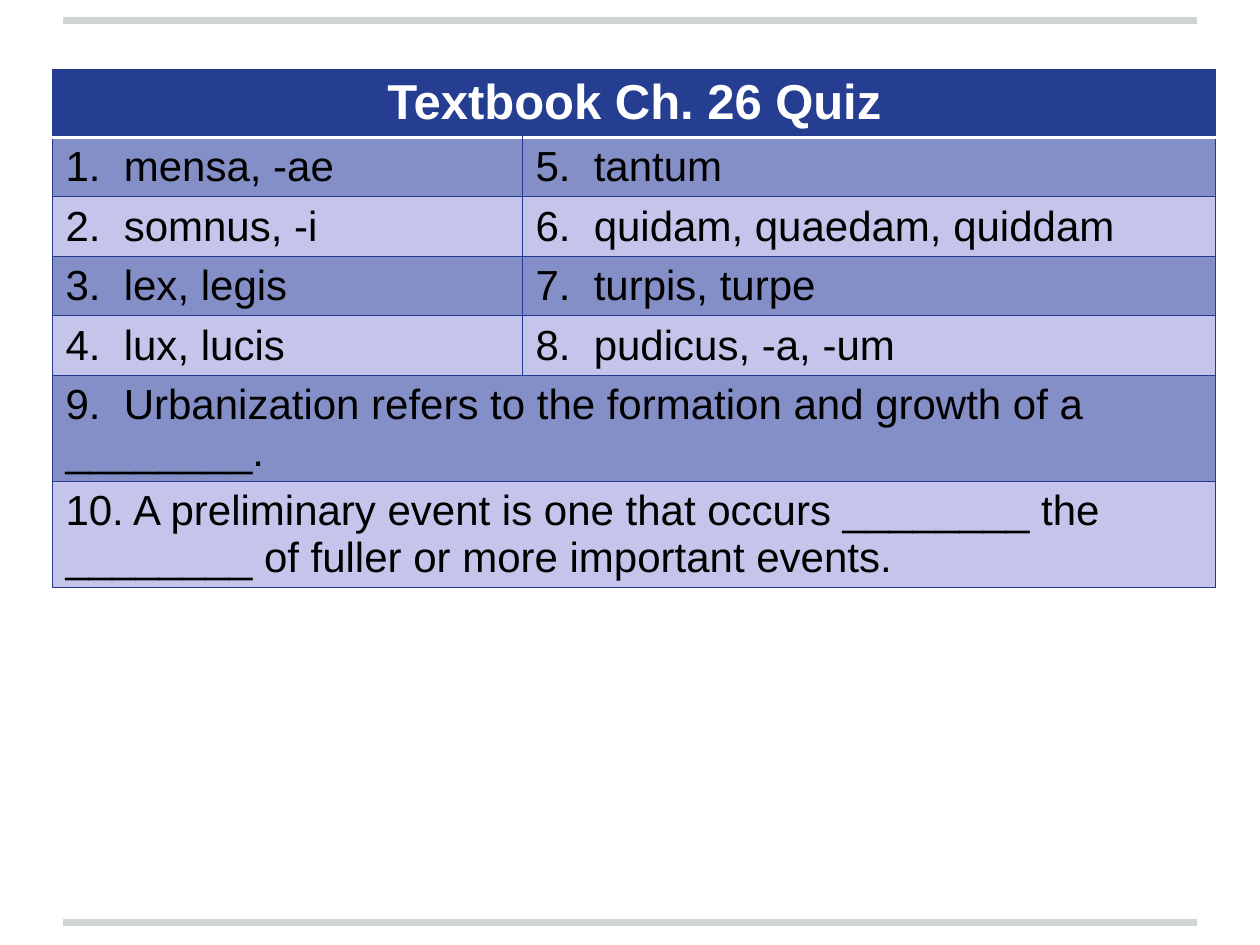
from dataclasses import dataclass

from lxml import etree
from pptx import Presentation
from pptx.dml.color import RGBColor
from pptx.enum import shapes, text
from pptx.oxml import ns
from pptx.util import Inches, Pt


@dataclass(frozen=True)
class Theme:
    font: str = "Arial"
    header_size: float = 28
    body_size: float = 24
    header_fill: str = "253E91"
    row_fills: tuple[str, str] = ("858FC7", "C5C5EB")
    border: str = "223B90"
    border_width: float = 0.75
    header_rule_width: float = 2
    white: str = "FFFFFF"
    black: str = "000000"
    rule: str = "CFD4D4"
    rule_width: float = 4


@dataclass(frozen=True)
class QuizRow:
    texts: tuple[str, ...]
    height: float = 0.47


THEME = Theme()
COLUMN_WIDTHS = (3.73, 5.5)
RULE_TOPS = (7.32, 0.16)
QUIZ_ROWS = (
    QuizRow(("Textbook Ch. 26 Quiz",), 0.54),
    QuizRow(("1.  mensa, -ae", "5.  tantum")),
    QuizRow(("2.  somnus, -i", "6.  quidam, quaedam, quiddam")),
    QuizRow(("3.  lex, legis", "7.  turpis, turpe")),
    QuizRow(("4.  lux, lucis", "8.  pudicus, -a, -um")),
    QuizRow(("9.  Urbanization refers to the formation and growth of a ________.",), 0.84),
    QuizRow(("10. A preliminary event is one that occurs ________ the ________ "
             "of fuller or more important events.",), 0.84),
)


def write_text(frame, content: str, *, size: float, color: str,
               bold: bool = False, align=text.PP_ALIGN.LEFT) -> None:
    paragraph = frame.paragraphs[0]
    paragraph.alignment = align
    run = paragraph.add_run()
    run.text = content
    run.font.name = THEME.font
    run.font.size = Pt(size)
    run.font.bold = bold
    run.font.color.rgb = RGBColor.from_string(color)


def set_borders(cell, row_index: int) -> None:
    properties = cell._tc.get_or_add_tcPr()
    header_edge = {0: "lnB", 1: "lnT"}.get(row_index)
    for position, edge in enumerate(("lnL", "lnR", "lnT", "lnB")):
        is_header_rule = edge == header_edge
        width = THEME.header_rule_width if is_header_rule else THEME.border_width
        line = etree.Element(ns.qn(f"a:{edge}"), w=str(Pt(width)))
        fill = etree.SubElement(line, ns.qn("a:solidFill"))
        color = THEME.white if is_header_rule else THEME.border
        etree.SubElement(fill, ns.qn("a:srgbClr"), val=color)
        properties.insert(position, line)


def add_rule(slide, top: float) -> None:
    connector = slide.shapes.add_connector(
        shapes.MSO_CONNECTOR.STRAIGHT,
        Inches(0.5), Inches(top), Inches(9.5), Inches(top))
    connector.line.color.rgb = RGBColor.from_string(THEME.rule)
    connector.line.width = Pt(THEME.rule_width)
    etree.SubElement(connector._element.spPr, ns.qn("a:effectLst"))


def fill_row(table, row_index: int, quiz_row: QuizRow) -> None:
    is_header = row_index == 0
    table.rows[row_index].height = Inches(quiz_row.height)
    cells = [table.cell(row_index, column) for column in range(len(COLUMN_WIDTHS))]
    if len(quiz_row.texts) == 1:
        cells[0].merge(cells[-1])
    color = THEME.header_fill if is_header else THEME.row_fills[(row_index - 1) % 2]
    for cell in cells:
        cell.fill.solid()
        cell.fill.fore_color.rgb = RGBColor.from_string(color)
        set_borders(cell, row_index)
    for cell, content in zip(cells, quiz_row.texts):
        write_text(
            cell.text_frame, content,
            size=THEME.header_size if is_header else THEME.body_size,
            color=THEME.white if is_header else THEME.black,
            bold=is_header,
            align=text.PP_ALIGN.CENTER if is_header else text.PP_ALIGN.LEFT)


def add_quiz_table(slide) -> None:
    height = sum(quiz_row.height for quiz_row in QUIZ_ROWS)
    table = slide.shapes.add_table(
        len(QUIZ_ROWS), len(COLUMN_WIDTHS), Inches(0.42), Inches(0.55),
        Inches(sum(COLUMN_WIDTHS)), Inches(height)).table
    for column, width in zip(table.columns, COLUMN_WIDTHS):
        column.width = Inches(width)
    for row_index, quiz_row in enumerate(QUIZ_ROWS):
        fill_row(table, row_index, quiz_row)


def main() -> None:
    presentation = Presentation()
    presentation.slide_width = Inches(10)
    presentation.slide_height = Inches(7.5)
    slide = presentation.slides.add_slide(presentation.slide_layouts[6])
    for top in RULE_TOPS:
        add_rule(slide, top)
    add_quiz_table(slide)
    presentation.save("out.pptx")


if __name__ == "__main__":
    main()
